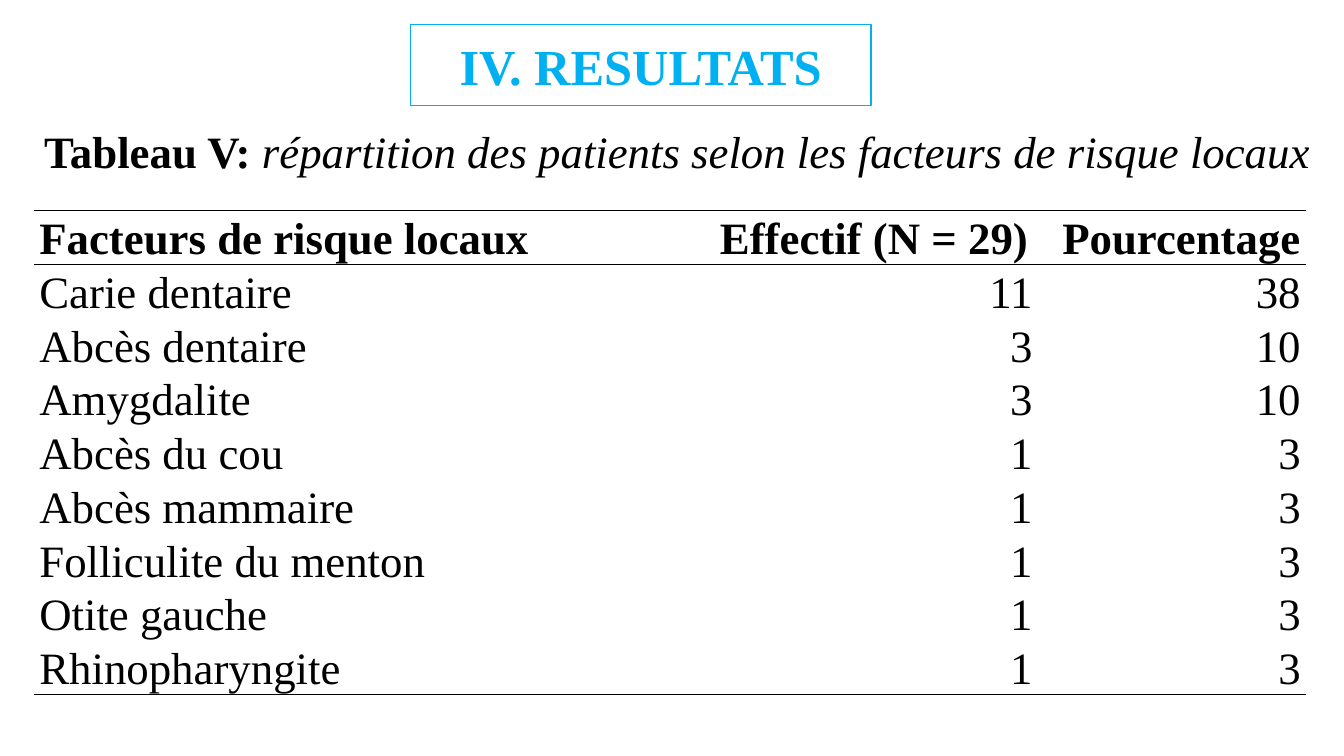
from lxml import etree
from pptx import Presentation
from pptx.dml.color import RGBColor
from pptx.enum.shapes import MSO_SHAPE
from pptx.enum.text import MSO_ANCHOR, PP_ALIGN
from pptx.oxml.ns import qn
from pptx.util import Inches, Pt

RECTANGLE = MSO_SHAPE.RECTANGLE
MIDDLE, BOTTOM = MSO_ANCHOR.MIDDLE, MSO_ANCHOR.BOTTOM
LEFT, CENTER, RIGHT = PP_ALIGN.LEFT, PP_ALIGN.CENTER, PP_ALIGN.RIGHT
SKY = RGBColor(0x00, 0xB0, 0xF0)
BLACK = RGBColor(0x00, 0x00, 0x00)
FONT = "Times New Roman"

MARGIN = 0.34
COLUMNS = [6.75, 3.2, 2.66]
TABLE_TOP, TABLE_HEIGHT = 2.09, 4.8


def write(frame, text, size=32, color=BLACK, bold=False, italic=False, align=LEFT):
    """Append a formatted run to the first paragraph of a text frame."""
    paragraph = frame.paragraphs[0]
    paragraph.alignment = align
    run = paragraph.add_run()
    run.text = text
    font = run.font
    font.name, font.size, font.bold, font.italic = FONT, Pt(size), bold, italic
    font.color.rgb = color


def set_borders(cell, ruled):
    """Rule the named sides in black and clear the others."""
    properties = cell._tc.get_or_add_tcPr()
    for index, side in enumerate(("lnL", "lnR", "lnT", "lnB")):
        line = etree.Element(qn(f"a:{side}"), w=str(Pt(1)))
        if side in ruled:
            fill = etree.SubElement(line, qn("a:solidFill"))
            etree.SubElement(fill, qn("a:srgbClr"), val=str(BLACK))
        else:
            etree.SubElement(line, qn("a:noFill"))
        properties.insert(index, line)


presentation = Presentation()
presentation.slide_width, presentation.slide_height = Inches(13.33), Inches(7.5)
slide = presentation.slides.add_slide(presentation.slide_layouts[6])

# Section heading
heading = slide.shapes.add_shape(
    RECTANGLE, Inches(4.07), Inches(0.24), Inches(4.57), Inches(0.81))
heading.shadow.inherit = False
heading.fill.background()
heading.line.color.rgb = SKY
heading.line.width = Pt(1)
heading.text_frame.vertical_anchor = MIDDLE
write(heading.text_frame, "IV. RESULTATS", size=36, color=SKY, bold=True, align=CENTER)

# Risk factor table
risk_factors = [
    ("Facteurs de risque locaux", "Effectif (N = 29)", "Pourcentage"),
    ("Carie dentaire", "11", "38"),
    ("Abcès dentaire", "3", "10"),
    ("Amygdalite", "3", "10"),
    ("Abcès du cou", "1", "3"),
    ("Abcès mammaire", "1", "3"),
    ("Folliculite du menton", "1", "3"),
    ("Otite gauche", "1", "3"),
    ("Rhinopharyngite", "1", "3"),
]
last_row = len(risk_factors) - 1
table = slide.shapes.add_table(
    len(risk_factors), len(COLUMNS), Inches(MARGIN), Inches(TABLE_TOP),
    Inches(sum(COLUMNS)), Inches(TABLE_HEIGHT)).table
table.first_row = table.horz_banding = False
for column, width in zip(table.columns, COLUMNS):
    column.width = Inches(width)

for r, values in enumerate(risk_factors):
    header = r == 0
    ruled = {0: ("lnT", "lnB"), 1: ("lnT",), last_row: ("lnB",)}.get(r, ())
    for c, value in enumerate(values):
        cell = table.cell(r, c)
        cell.fill.background()
        cell.margin_left = cell.margin_right = Inches(0.05)
        cell.margin_top = cell.margin_bottom = 0
        cell.vertical_anchor = BOTTOM
        set_borders(cell, ruled)
        left_aligned = c == 0 or (header and c == 1)
        write(cell.text_frame, value, bold=header, align=LEFT if left_aligned else RIGHT)

# Table caption
caption = slide.shapes.add_textbox(
    Inches(MARGIN), Inches(1.18), Inches(12.86), Inches(0.64)).text_frame
caption.word_wrap = True
write(caption, "Tableau V: ", bold=True)
write(caption, "répartition des patients selon les facteurs de risque locaux", italic=True)

presentation.save("out.pptx")
